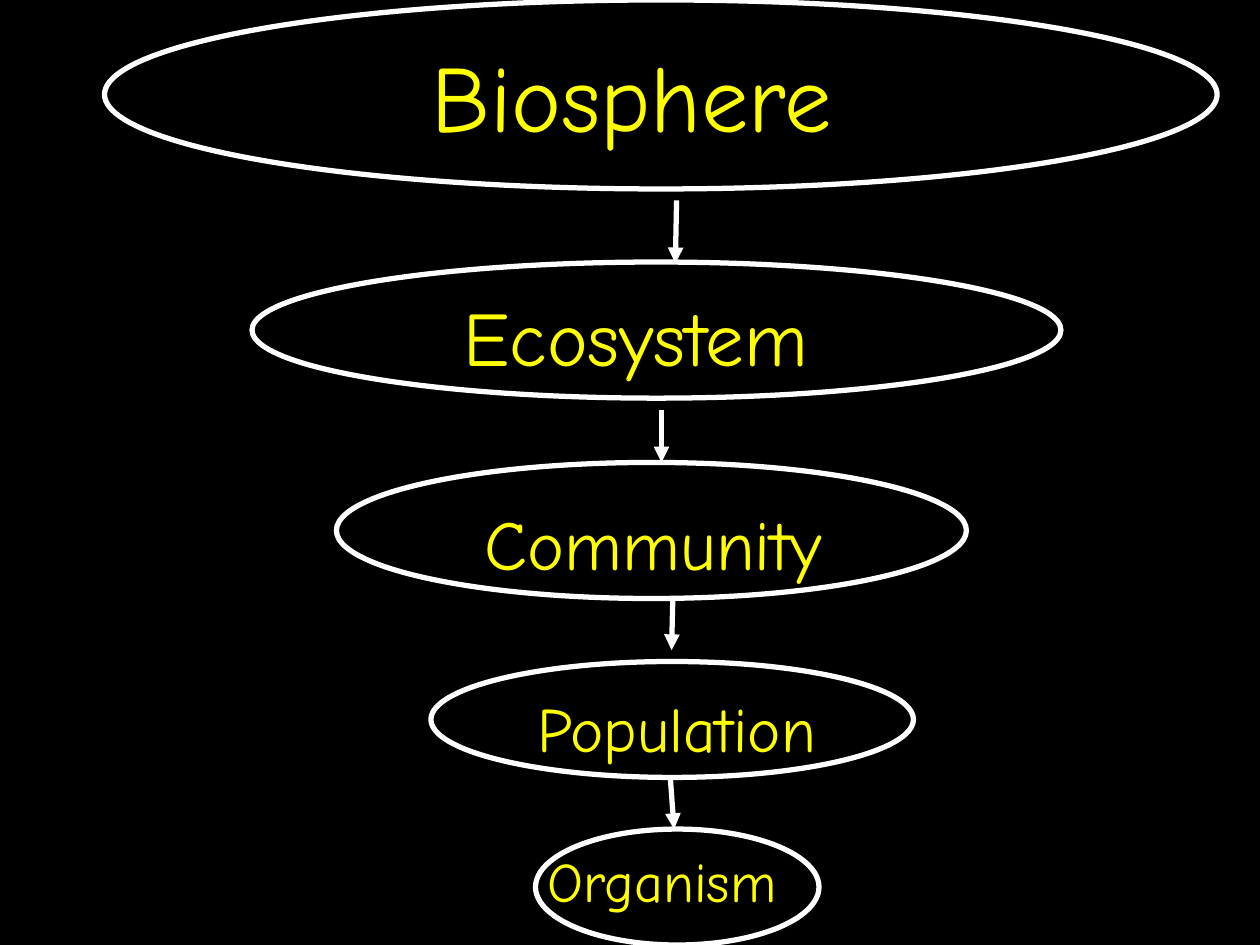
"""Build a slide of the levels of ecological organization, from biosphere to organism."""
from dataclasses import dataclass

from lxml import etree
from pptx import Presentation
from pptx.dml.color import RGBColor
from pptx.enum.shapes import MSO_CONNECTOR, MSO_SHAPE
from pptx.enum.text import MSO_AUTO_SIZE
from pptx.oxml.ns import qn
from pptx.util import Inches, Pt

OVAL = MSO_SHAPE.OVAL
STRAIGHT = MSO_CONNECTOR.STRAIGHT
FIT_SHAPE = MSO_AUTO_SIZE.SHAPE_TO_FIT_TEXT


@dataclass(frozen=True)
class Theme:
    font: str = "Comic Neue"
    background: RGBColor = RGBColor(0, 0, 0)
    outline: RGBColor = RGBColor(255, 255, 255)
    label: RGBColor = RGBColor(255, 255, 0)
    line_width: float = 3


THEME = Theme()
SLIDE_SIZE = (10, 7.5)

# name, type size, oval frame, label frame (left, top, width, height)
LEVELS = [
    ("Biosphere", 54, (0.83, 0, 8.83, 1.5), (3.33, 0.25, 4, 1)),
    ("Ecosystem", 44, (2, 2.08, 6.42, 1.08), (3.58, 2.25, 3.58, 0.83)),
    ("Community", 40, (2.67, 3.67, 5, 1.08), (3.75, 3.92, 3.25, 0.77)),
    ("Population", 36, (3.42, 5.25, 3.83, 0.92), (4.17, 5.42, 2.58, 0.7)),
    ("Organism", 32, (4.25, 6.58, 2.25, 0.92), (4.25, 6.67, 2.75, 0.63)),
]
ARROWS = [
    (5.37, 1.59, 5.36, 2.09),
    (5.25, 3.25, 5.25, 3.67),
    (5.34, 4.75, 5.33, 5.16),
    (5.32, 6.17, 5.35, 6.58),
]


def inches(values):
    return [Inches(value) for value in values]


def style_line(line):
    line.color.rgb = THEME.outline
    line.width = Pt(THEME.line_width)


def add_oval(slide, frame):
    oval = slide.shapes.add_shape(OVAL, *inches(frame))
    oval.shadow.inherit = False
    oval.fill.background()
    style_line(oval.line)


def add_label(slide, name, size, frame):
    box = slide.shapes.add_textbox(*inches(frame))
    text_frame = box.text_frame
    text_frame.word_wrap = True
    text_frame.auto_size = FIT_SHAPE
    text_frame.text = name
    font = text_frame.paragraphs[0].runs[0].font
    font.name = THEME.font
    font.size = Pt(size)
    font.color.rgb = THEME.label


def add_arrow(slide, ends):
    arrow = slide.shapes.add_connector(STRAIGHT, *inches(ends))
    style_line(arrow.line)
    properties = arrow._element.spPr
    etree.SubElement(properties.find(qn("a:ln")), qn("a:tailEnd"), type="triangle")
    etree.SubElement(properties, qn("a:effectLst"))


def main():
    deck = Presentation()
    deck.slide_width, deck.slide_height = inches(SLIDE_SIZE)
    slide = deck.slides.add_slide(deck.slide_layouts.get_by_name("Blank"))
    background = slide.background.fill
    background.solid()
    background.fore_color.rgb = THEME.background

    for name, size, oval_frame, label_frame in LEVELS:
        add_oval(slide, oval_frame)
        add_label(slide, name, size, label_frame)
    for ends in ARROWS:
        add_arrow(slide, ends)

    deck.save("out.pptx")


if __name__ == "__main__":
    main()
